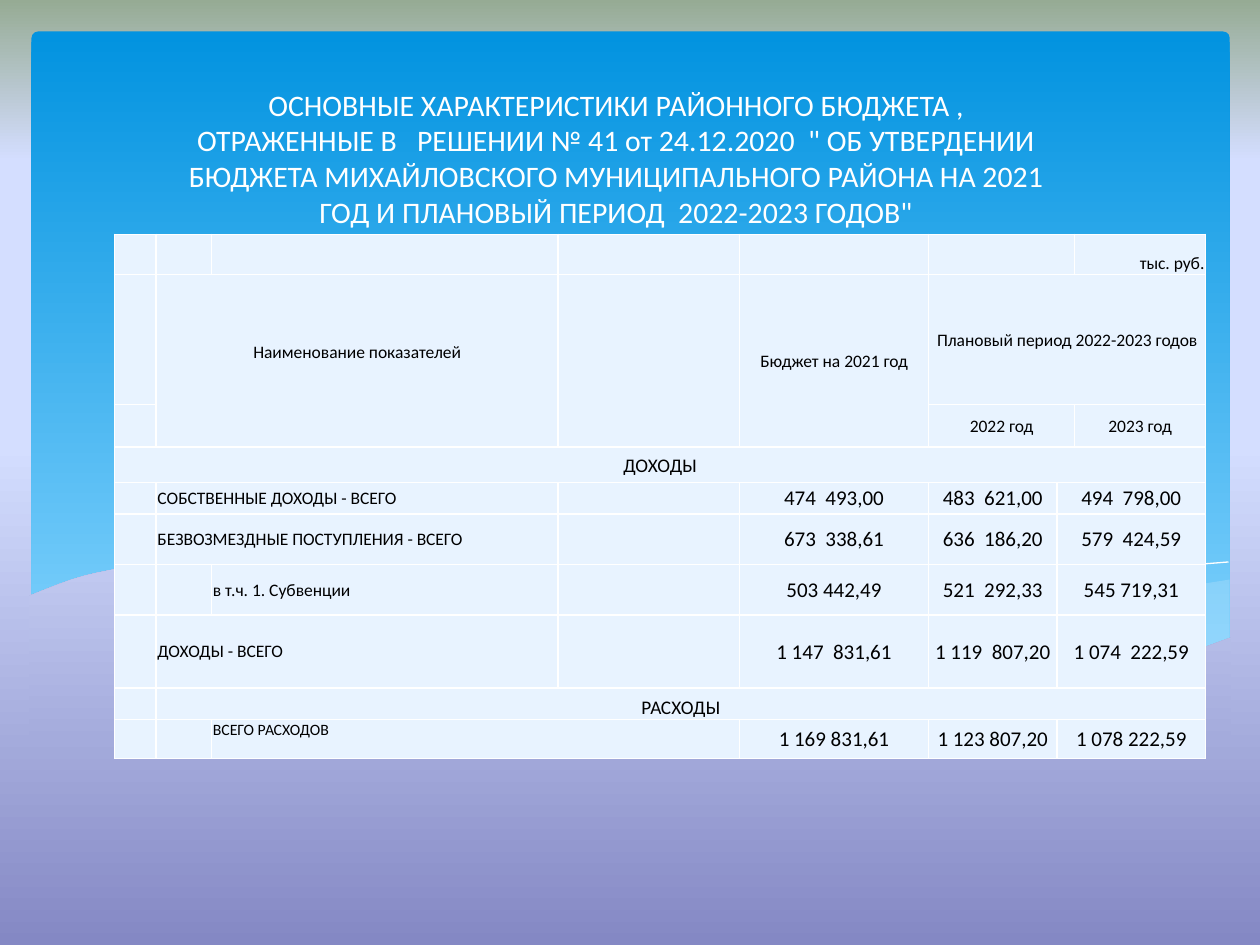
from lxml import etree
from pptx import Presentation
from pptx.dml.color import RGBColor
from pptx.enum import shapes, text
from pptx.oxml.ns import qn
from pptx.util import Inches, Pt

FONT = "Calibri"
COLORS = {"white": "FFFFFF", "black": "000000", "cell": "E8F3FF", "mist": "C6E7FC",
          "blue": "0293E0", "sky": "83D3FE", "violet": "8488C4", "lavender": "D4DEFF",
          "sage": "96AB94", "wave_low": "A4ABDC", "wave_high": "C2CAF1"}
BACKGROUND = [(0, "violet"), (53, "lavender"), (83, "lavender"), (100, "sage")]
TITLE = ("ОСНОВНЫЕ ХАРАКТЕРИСТИКИ РАЙОННОГО БЮДЖЕТА , ОТРАЖЕННЫЕ В   РЕШЕНИИ № 41 от "
         "24.12.2020  \" ОБ УТВЕРДЕНИИ БЮДЖЕТА МИХАЙЛОВСКОГО МУНИЦИПАЛЬНОГО РАЙОНА НА "
         "2021 ГОД И ПЛАНОВЫЙ ПЕРИОД  2022-2023 ГОДОВ\"")

COLUMNS = [0.33, 0.44, 2.75, 1.44, 1.5, 1.02, 0.14, 1.04]
ROWS = [0.32, 1.03, 0.34, 0.28, 0.25, 0.4, 0.4, 0.58, 0.25, 0.31]
HEADINGS = [
    (0, 7, "тыс. руб.", {"align": "RIGHT", "anchor": "BOTTOM"}),
    (1, 1, "Наименование показателей", {"bottom": 0.15}),
    (1, 4, "Бюджет на 2021 год", {}),
    (1, 5, "Плановый период 2022-2023 годов", {}),
    (2, 5, "2022 год", {}),
    (2, 7, "2023 год", {}),
    (3, 0, "ДОХОДЫ", {"size": 11}),
    (8, 1, "РАСХОДЫ", {"size": 11, "anchor": "BOTTOM"}),
]
INDICATORS = [
    (4, 1, "СОБСТВЕННЫЕ ДОХОДЫ - ВСЕГО", {}, ["474  493,00", "483  621,00", "494  798,00"]),
    (5, 1, "БЕЗВОЗМЕЗДНЫЕ ПОСТУПЛЕНИЯ - ВСЕГО", {},
     ["673  338,61", "636  186,20", "579  424,59"]),
    (6, 2, "в т.ч. 1. Субвенции", {}, ["503 442,49", "521  292,33", "545 719,31"]),
    (7, 1, "ДОХОДЫ - ВСЕГО", {}, ["1 147  831,61", "1 119  807,20", "1 074  222,59"]),
    (9, 2, "ВСЕГО РАСХОДОВ", {"size": 9, "anchor": "TOP"},
     ["1 169 831,61", "1 123 807,20", "1 078 222,59"]),
]
MERGES = [(0, 5, 1, 2), (1, 1, 2, 2), (1, 3, 2, 1), (1, 4, 2, 1), (1, 5, 1, 3),
          (2, 5, 1, 2), (3, 0, 1, 8), (8, 1, 1, 7), (9, 2, 1, 2)]
MERGES += [(row, 1, 1, 2) for row in (4, 5, 7)] + [(row, 6, 1, 2) for row in (4, 5, 6, 7, 9)]

WAVES = [
    {"curves": [[(9.76, 4.6), (9.35, 4.67), (8.61, 4.83), (7.79, 5.03), (7.06, 5.18), (6.61, 5.25)],
                [(6.61, 5.25), (7.05, 5.31), (7.57, 5.36), (8.14, 5.38), (8.72, 5.34),
                 (9.28, 5.24), (9.76, 5.07)]], "fill": "mist", "alpha": 29},
    {"curves": [[(8.93, 5.33), (8.07, 5.2), (7.06, 5), (6.29, 4.82), (5.55, 4.65), (4.89, 4.54),
                 (4.2, 4.47), (3.61, 4.46), (2.86, 4.52)],
                [(2.86, 4.52), (3.62, 4.63), (4.49, 4.82), (5.3, 5.01), (6.01, 5.15), (6.8, 5.28),
                 (7.48, 5.36), (8.18, 5.39), (8.93, 5.33)]], "fill": "mist", "alpha": 40},
    {"curves": [[(3.09, 4.56), (3.44, 4.5), (4.01, 4.47), (4.69, 4.49), (5.33, 4.54),
                 (6.08, 4.64), (6.95, 4.79), (7.95, 5.02), (9.07, 5.32)]], "line": "white"},
    {"curves": [[(6.13, 5.17), (6.72, 5.01), (7.48, 4.83), (8.36, 4.64), (9.1, 4.52),
                 (9.75, 4.46)]], "line": "white"},
    {"curves": [[(9.77, 5.06), (9.3, 5.22), (8.75, 5.33), (8.09, 5.37), (7.44, 5.34), (6.68, 5.25),
                 (5.79, 5.1), (4.47, 4.8), (3.65, 4.62), (2.92, 4.51), (2.3, 4.45), (1.77, 4.44),
                 (1.19, 4.48), (0.67, 4.57), (0.23, 4.73)], [(0.23, 5.89), (9.77, 5.89)]],
     "gradient": [(0, "wave_low"), (100, "wave_high")]},
]


def rgb(name):
    return RGBColor.from_string(COLORS[name])


def set_gradient(fill, element, stops, angle):
    fill.gradient()
    gradient = element.find(".//" + qn("a:gradFill"))
    stop_list = gradient.find(qn("a:gsLst"))
    for stop in list(stop_list):
        stop_list.remove(stop)
    for position, name in stops:
        stop = etree.SubElement(stop_list, qn("a:gs"), pos=str(position * 1000))
        etree.SubElement(stop, qn("a:srgbClr"), val=COLORS[name])
    gradient.find(qn("a:lin")).set("ang", str(angle * 60000))


def write_text(frame, content, size=10, color="black", align="CENTER"):
    paragraph = frame.paragraphs[0]
    paragraph.alignment = getattr(text.PP_ALIGN, align)
    run = paragraph.add_run()
    run.text = content
    run.font.name = FONT
    run.font.size = Pt(size)
    run.font.color.rgb = rgb(color)


def smooth(points, steps=5):
    padded = [points[0], *points, points[-1]]
    result = [points[0]]
    for a, b, c, d in zip(padded, padded[1:], padded[2:], padded[3:]):
        for step in range(1, steps + 1):
            t = step / steps
            result.append(tuple(
                q + t * (r - p + t * (2 * p - 5 * q + 4 * r - s + t * (3 * q - p - 3 * r + s))) / 2
                for p, q, r, s in zip(a, b, c, d)))
    return result


def add_wave(slide, curves, fill=None, alpha=100, line=None, gradient=None):
    points = [(Inches(x), Inches(y)) for curve in curves
              for x, y in (smooth(curve) if len(curve) > 2 else curve)]
    builder = slide.shapes.build_freeform(*points[0])
    builder.add_line_segments(points[1:], close=line is None)
    shape = builder.convert_to_shape()
    shape.shadow.inherit = False
    if gradient:
        set_gradient(shape.fill, shape._element, gradient, 270)
    elif fill:
        shape.fill.solid()
        shape.fill.fore_color.rgb = rgb(fill)
        color = shape._element.spPr.find(".//" + qn("a:srgbClr"))
        etree.SubElement(color, qn("a:alpha"), val=str(alpha * 1000))
    else:
        shape.fill.background()
    if line:
        shape.line.color.rgb = rgb(line)
        shape.line.width = Pt(0)
    else:
        shape.line.fill.background()


def format_cell(cell):
    cell.margin_left = cell.margin_right = cell.margin_top = Inches(0.01)
    cell.margin_bottom = 0
    properties = cell._tc.get_or_add_tcPr()
    for side in ("lnL", "lnR", "lnT", "lnB"):
        border = etree.SubElement(properties, qn("a:" + side), w=str(Pt(1)))
        solid = etree.SubElement(border, qn("a:solidFill"))
        etree.SubElement(solid, qn("a:srgbClr"), val=COLORS["white"])
    cell.fill.solid()
    cell.fill.fore_color.rgb = rgb("cell")
    cell.text_frame.paragraphs[0]._p.get_or_add_endParaRPr().set("sz", "1000")


def fill_cell(cell, content, anchor="MIDDLE", bottom=0, **style):
    cell.vertical_anchor = getattr(text.MSO_ANCHOR, anchor)
    cell.margin_bottom = Inches(bottom)
    write_text(cell.text_frame, content, **style)


def add_budget_table(slide):
    table = slide.shapes.add_table(len(ROWS), len(COLUMNS), Inches(0.91), Inches(1.86),
                                   Inches(sum(COLUMNS)), Inches(sum(ROWS))).table
    table.first_row = table.horz_banding = False
    for column, width in zip(table.columns, COLUMNS):
        column.width = Inches(width)
    for row, height in zip(table.rows, ROWS):
        row.height = Inches(height)
    for cell in table.iter_cells():
        format_cell(cell)
    for row, column, height, width in MERGES:
        table.cell(row, column).merge(table.cell(row + height - 1, column + width - 1))
    for row, column, content, style in HEADINGS:
        fill_cell(table.cell(row, column), content, **style)
    for row, column, label, style, values in INDICATORS:
        fill_cell(table.cell(row, column), label, align="LEFT", **style)
        for offset, value in enumerate(values):
            fill_cell(table.cell(row, 4 + offset), value, size=12)


def main():
    presentation = Presentation()
    presentation.slide_width, presentation.slide_height = Inches(10), Inches(7.5)
    slide = presentation.slides.add_slide(presentation.slide_layouts[6])
    set_gradient(slide.background.fill, slide._element, BACKGROUND, 270)

    panel = slide.shapes.add_shape(shapes.MSO_SHAPE.ROUNDED_RECTANGLE, Inches(0.25),
                                   Inches(0.25), Inches(9.51), Inches(5.18))
    panel.adjustments[0] = 0.01
    panel.shadow.inherit = False
    panel.line.fill.background()
    set_gradient(panel.fill, panel._element, [(0, "blue"), (100, "sky")], 90)
    for wave in WAVES:
        add_wave(slide, **wave)

    title = slide.shapes.add_textbox(Inches(1.38), Inches(0.84), Inches(7.02), Inches(1.03))
    title.text_frame.word_wrap = True
    title.text_frame.vertical_anchor = text.MSO_ANCHOR.BOTTOM
    write_text(title.text_frame, TITLE, size=17, color="white")
    add_budget_table(slide)
    presentation.save("out.pptx")


if __name__ == "__main__":
    main()
